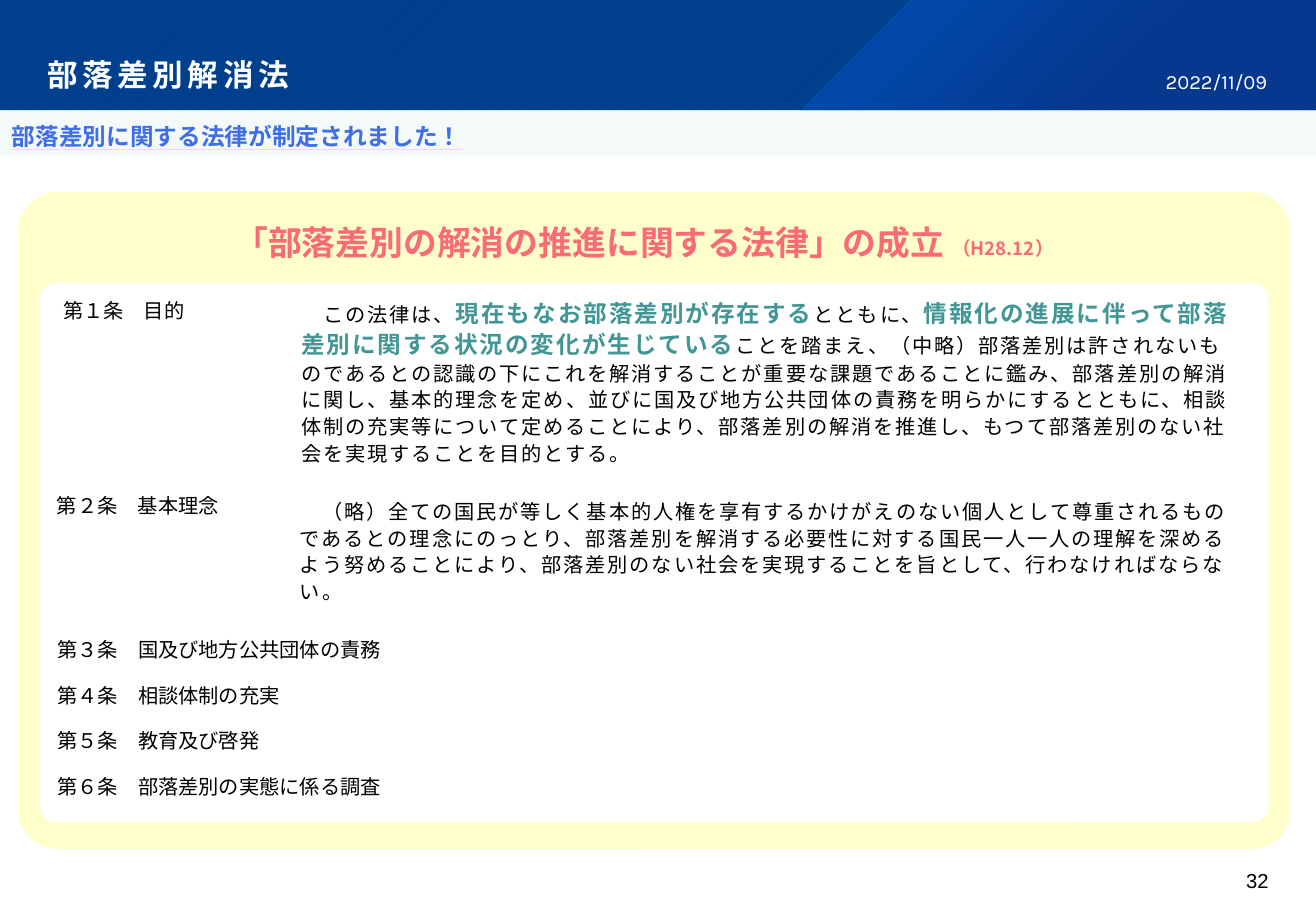
from dataclasses import dataclass

from lxml import etree
from pptx import Presentation
from pptx.dml.color import RGBColor
from pptx.enum.dml import MSO_PATTERN
from pptx.enum.shapes import MSO_SHAPE
from pptx.enum.text import MSO_ANCHOR, MSO_AUTO_SIZE, PP_ALIGN
from pptx.oxml import parse_xml
from pptx.oxml.ns import qn
from pptx.shapes.autoshape import Shape
from pptx.slide import Slide
from pptx.text.text import _Run
from pptx.util import Inches, Pt

LEFT, CENTER, RIGHT = PP_ALIGN.LEFT, PP_ALIGN.CENTER, PP_ALIGN.RIGHT
TOP, MIDDLE, BOTTOM = MSO_ANCHOR.TOP, MSO_ANCHOR.MIDDLE, MSO_ANCHOR.BOTTOM
RECTANGLE, ROUNDED = MSO_SHAPE.RECTANGLE, MSO_SHAPE.ROUNDED_RECTANGLE
UPWARD_DIAGONAL = MSO_PATTERN.DARK_UPWARD_DIAGONAL
NO_AUTOFIT = MSO_AUTO_SIZE.NONE
DRAWING = "http://schemas.openxmlformats.org/drawingml/2006/main"


@dataclass(frozen=True)
class Theme:
    japanese: str = "Noto Sans CJK JP"
    heading: str = "Karla"
    number: str = "Arial"
    white: str = "FFFFFF"
    black: str = "000000"
    banner_dark: str = "003579"
    banner: str = "004292"
    glow: str = "0064DF"
    glow_end: str = "0C338E"
    strip: str = "F4FAFA"
    subtitle: str = "3E6EE8"
    underline: str = "FFE680"
    panel: str = "FFFFCC"
    law: str = "FA6B75"
    key: str = "429696"
    title_size: float = 18.1
    law_size: float = 20
    key_size: float = 14
    text_size: float = 12
    small_size: float = 11


THEME = Theme()


@dataclass(frozen=True)
class Box:
    left: float
    top: float
    width: float
    height: float


@dataclass(frozen=True)
class Piece:
    text: str
    size: float = THEME.text_size
    color: str = THEME.black
    bold: bool = False
    font: str = THEME.japanese
    spacing: float = 0


@dataclass(frozen=True)
class Label:
    box: Box
    pieces: tuple[Piece, ...]
    align: PP_ALIGN = LEFT
    anchor: MSO_ANCHOR = TOP
    line_spacing: float = 1.0
    insets: tuple[float, float, float, float] = (0.1, 0.05, 0.1, 0.05)


def plain(text: str) -> Piece:
    return Piece(text, spacing=1.1)


def key(text: str) -> Piece:
    return Piece(text, THEME.key_size, THEME.key, True, spacing=1.1)


SLIDE_WIDTH, SLIDE_HEIGHT, BANNER_HEIGHT = 10.83, 7.5, 0.91
BANNER = Box(0, 0, SLIDE_WIDTH, BANNER_HEIGHT)
NO_INSETS = (0, 0, 0, 0)

TITLE = Label(BANNER, (Piece("部落差別解消法", THEME.title_size, THEME.white, True, THEME.heading, 2.7),),
              anchor=BOTTOM, line_spacing=0.9, insets=(0.39, 0.36, 0.36, 0.14))
SUBTITLE = Label(Box(0, BANNER_HEIGHT, SLIDE_WIDTH, 0.37),
                 (Piece("部落差別に関する法律が制定されました！", THEME.key_size, THEME.subtitle, True),),
                 line_spacing=1.2)
ARTICLE_LIST = Box(0.37, 5.2, 4, 1.6)
LATER_ARTICLES = ("第３条　国及び地方公共団体の責務", "第４条　相談体制の充実",
                  "第５条　教育及び啓発", "第６条　部落差別の実態に係る調査")
LABELS = (
    Label(Box(-0.02, 1.78, 10.64, 0.44), (
        Piece("「部落差別の解消の推進に関する法律」の成立 ", THEME.law_size, THEME.law, True),
        Piece("（H28.12）", THEME.small_size, THEME.law, True)), CENTER),
    Label(Box(0.42, 2.41, 1.39, 0.3), (Piece("第１条　目的"),)),
    Label(Box(2.38, 2.39, 7.87, 1.51), (
        plain("　この法律は、"), key("現在もなお部落差別が存在する"), plain("とともに、"),
        key("情報化の進展に伴って部落差別に関する状況の変化が生じている"),
        plain("ことを踏まえ、（中略）部落差別は許されないものであるとの認識の下にこれを解消することが"
              "重要な課題であることに鑑み、部落差別の解消に関し、基本的理念を定め、並びに国及び地方"
              "公共団体の責務を明らかにするとともに、相談体制の充実等について定めることにより、"
              "部落差別の解消を推進し、もつて部落差別のない社会を実現することを目的とする。")),
          line_spacing=1.1),
    Label(Box(0.37, 4.01, 1.87, 0.3), (Piece("第２条　基本理念"),)),
    Label(Box(2.37, 4.04, 7.89, 0.99), (
        plain("　（略）全ての国民が等しく基本的人権を享有するかけがえのない個人として尊重されるもので"
              "あるとの理念にのっとり、部落差別を解消する必要性に対する国民一人一人の理解を深めるよう"
              "努めることにより、部落差別のない社会を実現することを旨として、行わなければならない。"),),
          line_spacing=1.1),
    Label(Box(7.99, 0.47, 2.44, 0.4), (Piece("2022/11/09", color=THEME.white, font=THEME.heading),),
          RIGHT, MIDDLE, insets=NO_INSETS),
    Label(Box(9.75, 7.15, 0.69, 0.3), (Piece("32", font=THEME.number),), RIGHT, insets=NO_INSETS),
)


def lengths(box: Box) -> tuple[Inches, ...]:
    return tuple(Inches(value) for value in (box.left, box.top, box.width, box.height))


def place(shape: Shape, box: Box) -> None:
    shape.left, shape.top, shape.width, shape.height = lengths(box)


def format_run(run: _Run, piece: Piece) -> None:
    run.font.size = Pt(piece.size)
    run.font.bold = piece.bold
    run.font.color.rgb = RGBColor.from_string(piece.color)
    run.font.name = piece.font
    properties = run.font._element
    properties.set("lang", "ja-JP")
    if piece.spacing:
        properties.set("spc", str(round(piece.spacing * 100)))
    east_asian = etree.Element(qn("a:ea"), typeface=THEME.japanese)
    properties.find(qn("a:latin")).addnext(east_asian)


def write(shape: Shape, label: Label) -> None:
    frame = shape.text_frame
    frame.word_wrap = True
    frame.auto_size = NO_AUTOFIT
    frame.vertical_anchor = label.anchor
    frame.margin_left, frame.margin_top, frame.margin_right, frame.margin_bottom = map(Inches, label.insets)
    paragraph = frame.paragraphs[0]
    paragraph.alignment = label.align
    paragraph.line_spacing = label.line_spacing
    for piece in label.pieces:
        run = paragraph.add_run()
        run.text = piece.text
        format_run(run, piece)


def add_panel(slide: Slide, kind: MSO_SHAPE, box: Box, color: str, corner: float = 0) -> Shape:
    shape = slide.shapes.add_shape(kind, *lengths(box))
    shape.shadow.inherit = False
    shape.line.fill.background()
    shape.fill.solid()
    shape.fill.fore_color.rgb = RGBColor.from_string(color)
    if corner:
        shape.adjustments[0] = corner
    return shape


def add_banner(slide: Slide) -> None:
    banner = add_panel(slide, RECTANGLE, BANNER, THEME.banner)
    banner.fill.patterned()
    banner.fill.pattern = UPWARD_DIAGONAL
    banner.fill.fore_color.rgb = RGBColor.from_string(THEME.banner_dark)
    banner.fill.back_color.rgb = RGBColor.from_string(THEME.banner)
    builder = slide.shapes.build_freeform(Inches(7.49), 0)
    corners = ((SLIDE_WIDTH, 0), (SLIDE_WIDTH, BANNER_HEIGHT), (6.58, BANNER_HEIGHT))
    builder.add_line_segments([(Inches(x), Inches(y)) for x, y in corners], close=True)
    glow = builder.convert_to_shape()
    glow.shadow.inherit = False
    glow.line.fill.background()
    stops = "".join(
        f'<a:gs pos="{position}"><a:srgbClr val="{color}"><a:alpha val="{alpha}"/></a:srgbClr></a:gs>'
        for position, color, alpha in ((0, THEME.glow, 50000), (62000, THEME.glow_end, 55000)))
    gradient = parse_xml(
        f'<a:gradFill xmlns:a="{DRAWING}"><a:gsLst>{stops}</a:gsLst><a:path path="circle">'
        '<a:fillToRect r="100000" b="100000"/></a:path></a:gradFill>')
    glow.element.spPr.find(qn("a:custGeom")).addnext(gradient)


def add_subtitle(slide: Slide) -> None:
    strip = add_panel(slide, RECTANGLE, SUBTITLE.box, THEME.strip)
    write(strip, SUBTITLE)
    font = strip.text_frame.paragraphs[0].runs[0].font
    font.underline = True
    underline = parse_xml(f'<a:uFill xmlns:a="{DRAWING}"><a:solidFill>'
                          f'<a:srgbClr val="{THEME.underline}"/></a:solidFill></a:uFill>')
    font._element.find(qn("a:latin")).addprevious(underline)


def fill_article_list(body: Shape) -> None:
    place(body, ARTICLE_LIST)
    frame = body.text_frame
    frame.text = "\n".join(LATER_ARTICLES)
    frame.auto_size = NO_AUTOFIT
    for paragraph in frame.paragraphs:
        paragraph.space_before = Pt(0)
        paragraph.space_after = Pt(12.5)
        properties = paragraph._p.get_or_add_pPr()
        properties.set("marL", "0")
        properties.set("indent", "0")
        etree.SubElement(properties, qn("a:buNone"))
        format_run(paragraph.runs[0], Piece(paragraph.text))


def main() -> None:
    presentation = Presentation()
    presentation.slide_width, presentation.slide_height = Inches(SLIDE_WIDTH), Inches(SLIDE_HEIGHT)
    slide = presentation.slides.add_slide(presentation.slide_layouts[1])
    title, body = slide.placeholders
    add_banner(slide)
    add_panel(slide, ROUNDED, Box(0.15, 1.58, 10.47, 5.41), THEME.panel, 0.06)
    add_panel(slide, ROUNDED, Box(0.33, 2.33, 10.11, 4.44), THEME.white, 0.03)
    add_subtitle(slide)
    place(title, TITLE.box)
    write(title, TITLE)
    fill_article_list(body)
    for placeholder in (title, body):
        slide.shapes.element.append(placeholder.element)
    for label in LABELS:
        write(slide.shapes.add_textbox(*lengths(label.box)), label)
    presentation.save("out.pptx")


if __name__ == "__main__":
    main()
